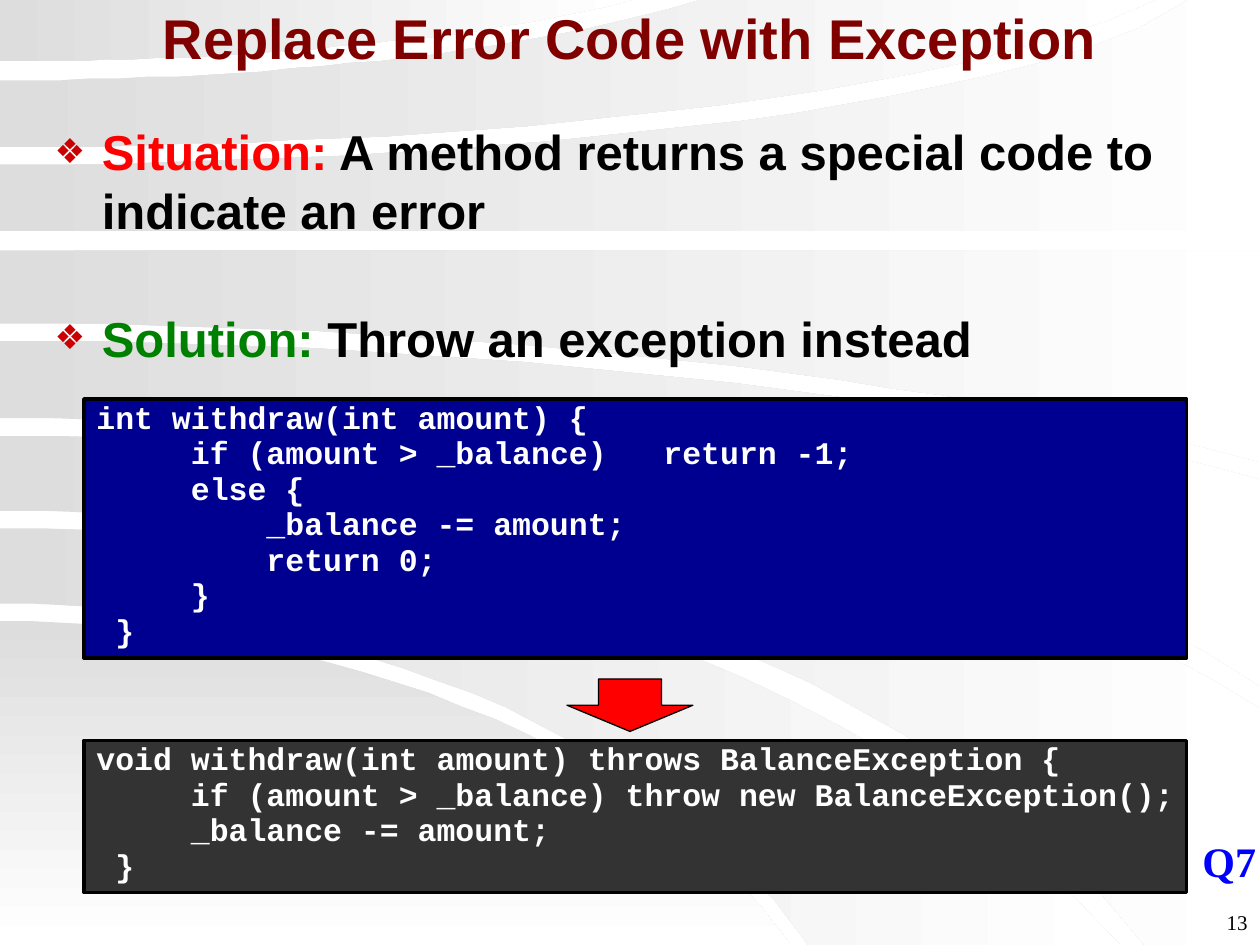
from dataclasses import dataclass
from math import sqrt

from lxml.etree import SubElement
from pptx import Presentation
from pptx.dml.color import RGBColor as RGB
from pptx.enum.shapes import MSO_SHAPE as SHAPE
from pptx.enum.text import MSO_ANCHOR as ANCHOR, MSO_AUTO_SIZE as AUTO, PP_ALIGN as ALIGN
from pptx.oxml.ns import qn
from pptx.util import Pt

WIDTH, HEIGHT = 720, 540
CURVE_STEPS = 24
CODE_CHAR = 10.8
HANGING = 27
BOX_LEFT, BOX_WIDTH = 48, 630


@dataclass(frozen=True)
class Theme:
    sans: str = "Arial"
    serif: str = "Times New Roman"
    mono: str = "Courier New"
    title_size: float = 32
    body_size: float = 28
    code_size: float = 18
    tag_size: float = 24
    number_size: float = 12
    black: str = "000000"
    white: str = "FFFFFF"
    haze: str = "DDDDDD"
    maroon: str = "800000"
    red: str = "FF0000"
    green: str = "008000"
    bullet: str = "CC0000"
    navy: str = "000090"
    charcoal: str = "333333"
    blue: str = "0000FF"


THEME = Theme()


@dataclass(frozen=True)
class Edge:
    """Quarter ellipse leaving the left side level; a positive depth bends down."""
    start: float
    radius: float = WIDTH
    depth: float = 0

    def y(self, x):
        return self.start + self.depth * (1 - sqrt(1 - (x / self.radius) ** 2))

    def reach(self):
        if self.depth == 0:
            return WIDTH if 0 < self.start < HEIGHT else 0
        room = HEIGHT - self.start if self.depth > 0 else self.start
        share = min(room / abs(self.depth), 1)
        return min(self.radius * sqrt(1 - (1 - share) ** 2), WIDTH)

    def points(self, band_reach):
        reach = self.reach()
        steps = CURVE_STEPS if self.depth else 1
        xs = [reach * i / steps for i in range(steps + 1)]
        curve = [(x, self.y(x)) for x in xs]
        return curve if reach == band_reach else curve + [(band_reach, curve[-1][1])]


SLIDE_TOP, SLIDE_BOTTOM = Edge(0), Edge(HEIGHT)
CORNER = (Edge(355, 500, 322), SLIDE_BOTTOM)
BANDS = [
    (Edge(302, 725, 450), Edge(345, 510, 338)),
    (Edge(249, 830, 310), Edge(292, 710, 407)),
    (Edge(195, 1050, 290), Edge(239, 800, 271)),
    (Edge(143), Edge(185, 1050, 290)),
    (Edge(94, 700, -124), Edge(132)),
    (Edge(46, 500, -115), Edge(84, 700, -126)),
    (SLIDE_TOP, Edge(35, 450, -87)),
]

OLD_CODE = [
    (0, "int withdraw(int amount) {"),
    (5, "if (amount > _balance)   return -1;"),
    (5, "else {"),
    (9, "_balance -= amount;"),
    (9, "return 0;"),
    (5, "}"),
    (1, "}"),
]
NEW_CODE = [
    (0, "void withdraw(int amount) throws BalanceException {"),
    (5, "if (amount > _balance) throw new BalanceException();"),
    (5, "_balance -= amount;"),
    (1, "}"),
]


def add_run(p, text, font, size, color, bold=True):
    r = p.add_run()
    r.text = text
    r.font.name = font
    r.font.size = Pt(size)
    r.font.bold = bold
    r.font.color.rgb = RGB.from_string(color)


def paragraph_at(tf, i):
    return tf.paragraphs[0] if i == 0 else tf.add_paragraph()


def set_indent(p, left, first=0):
    pPr = p._p.get_or_add_pPr()
    pPr.set("marL", str(Pt(left)))
    pPr.set("indent", str(Pt(first)))
    return pPr


def place(sp, left, top, width, height):
    sp.left, sp.top, sp.width, sp.height = Pt(left), Pt(top), Pt(width), Pt(height)


def add_band(slide, upper, lower, angle=0):
    reach = max(upper.reach(), lower.reach())
    outline = upper.points(reach) + lower.points(reach)[::-1]
    builder = slide.shapes.build_freeform(*outline[0], scale=Pt(1))
    builder.add_line_segments(outline[1:], close=True)
    sp = builder.convert_to_shape()
    sp.shadow.inherit = False
    sp.line.fill.background()
    sp.fill.gradient()
    sp.fill.gradient_angle = angle
    for stop, color, position in zip(sp.fill.gradient_stops, (THEME.haze, THEME.white), (0, 1)):
        stop.color.rgb = RGB.from_string(color)
        stop.position = position


def add_backdrop(slide):
    add_band(slide, *CORNER, angle=270)
    for upper, lower in BANDS:
        add_band(slide, upper, lower)


def add_block(slide, kind, box, fill, line_width):
    sp = slide.shapes.add_shape(kind, *map(Pt, box))
    sp.shadow.inherit = False
    sp.fill.solid()
    sp.fill.fore_color.rgb = RGB.from_string(fill)
    sp.line.color.rgb = RGB.from_string(THEME.black)
    sp.line.width = Pt(line_width)
    return sp


def add_code(slide, top, height, fill, lines):
    box = (BOX_LEFT, top, BOX_WIDTH, height)
    tf = add_block(slide, SHAPE.RECTANGLE, box, fill, 2).text_frame
    tf.word_wrap = True
    tf.vertical_anchor = ANCHOR.TOP
    for i, (columns, text) in enumerate(lines):
        p = paragraph_at(tf, i)
        p.alignment = ALIGN.LEFT
        p.line_spacing = 0.8
        p.space_after = Pt(3)
        set_indent(p, columns * CODE_CHAR)
        add_run(p, text, THEME.mono, THEME.code_size, THEME.white)


def add_label(slide, box, text, size, color, align, bold, wrap):
    tf = slide.shapes.add_textbox(*map(Pt, box)).text_frame
    tf.word_wrap = wrap
    p = tf.paragraphs[0]
    p.alignment = align
    add_run(p, text, THEME.serif, size, color, bold)


def fill_title(sp, text):
    place(sp, 6, 0, 708, 42)
    tf = sp.text_frame
    tf.auto_size = AUTO.NONE
    tf.vertical_anchor = ANCHOR.MIDDLE
    p = tf.paragraphs[0]
    p.alignment = ALIGN.CENTER
    add_run(p, text, THEME.sans, THEME.title_size, THEME.maroon)


def set_bullet(p):
    pPr = set_indent(p, HANGING, -HANGING)
    SubElement(SubElement(pPr, qn("a:buClr")), qn("a:srgbClr"), val=THEME.bullet)
    SubElement(pPr, qn("a:buSzPct"), val="70000")
    SubElement(pPr, qn("a:buChar"), char="❖")


def fill_body(sp, items):
    place(sp, 24, 66, 690, 402)
    tf = sp.text_frame
    tf.auto_size = AUTO.NONE
    for i, (lead, color, text, gap) in enumerate(items):
        p = paragraph_at(tf, i)
        p.space_before = Pt(gap)
        set_bullet(p)
        add_run(p, lead, THEME.sans, THEME.body_size, color)
        add_run(p, text, THEME.sans, THEME.body_size, THEME.black)


def main():
    prs = Presentation()
    prs.slide_width, prs.slide_height = Pt(WIDTH), Pt(HEIGHT)
    slide = prs.slides.add_slide(prs.slide_layouts[1])
    title, body = slide.placeholders

    add_backdrop(slide)
    add_label(slide, (570, 516, 150, 30), "13", THEME.number_size, THEME.black,
              ALIGN.RIGHT, bold=False, wrap=True)

    for sp in (title, body):
        sp.element.getparent().append(sp.element)
    fill_title(title, "Replace Error Code with Exception")
    fill_body(body, [
        ("Situation:", THEME.red, " A method returns a special code to indicate an error", 5.6),
        ("Solution: ", THEME.green, "Throw an exception instead", 39.5),
    ])

    add_code(slide, 228, 148, THEME.navy, OLD_CODE)
    add_code(slide, 423, 87, THEME.charcoal, NEW_CODE)
    add_block(slide, SHAPE.DOWN_ARROW, (324, 388, 72, 30), THEME.red, 0.75)
    add_label(slide, (680, 474, 46, 36), "Q7", THEME.tag_size, THEME.blue,
              ALIGN.LEFT, bold=True, wrap=False)
    prs.save("out.pptx")


if __name__ == "__main__":
    main()
